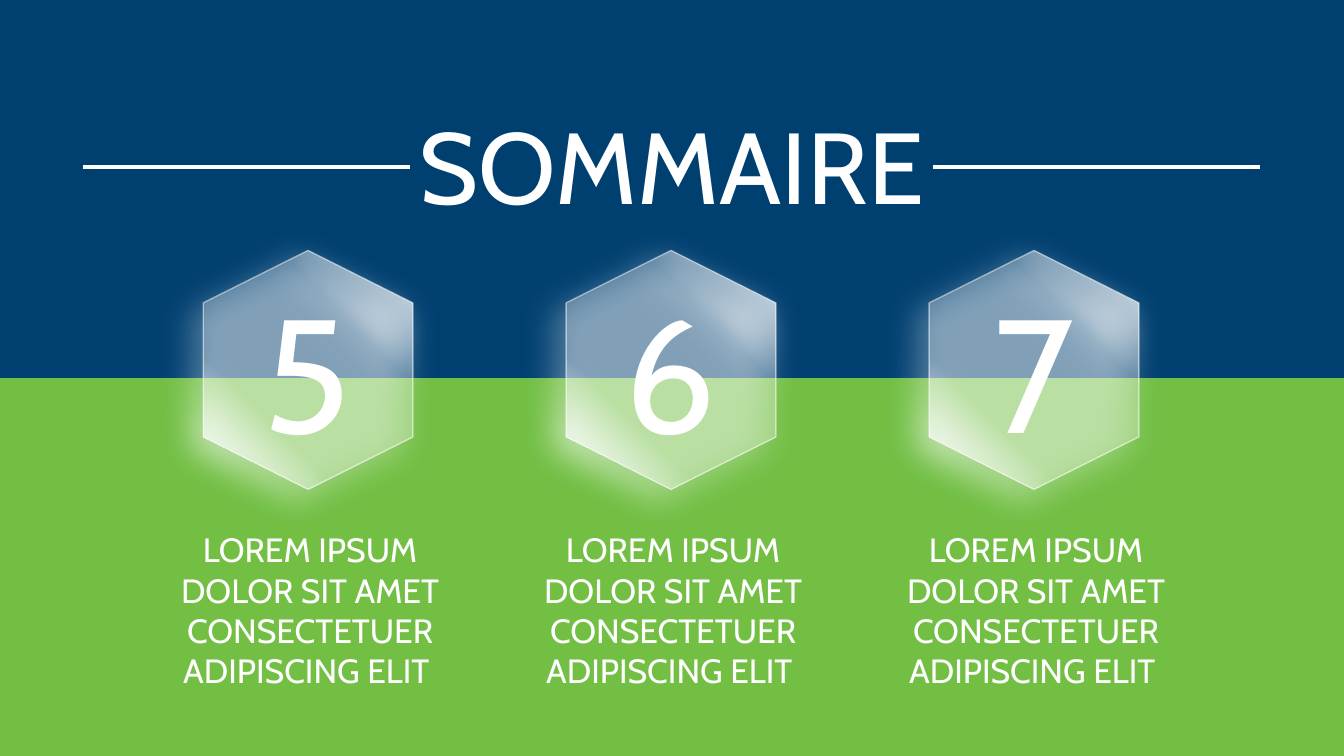
from dataclasses import dataclass

from lxml import etree
from pptx import Presentation
from pptx.dml.color import RGBColor
from pptx.enum.shapes import MSO_CONNECTOR, MSO_SHAPE
from pptx.enum.text import MSO_ANCHOR, MSO_AUTO_SIZE, PP_ALIGN
from pptx.oxml import parse_xml
from pptx.oxml.ns import qn
from pptx.util import Inches, Pt

RECT, HEX = MSO_SHAPE.RECTANGLE, MSO_SHAPE.HEXAGON
LINE = MSO_CONNECTOR.STRAIGHT
CENTER, TOP = PP_ALIGN.CENTER, MSO_ANCHOR.TOP
NO_FIT = MSO_AUTO_SIZE.NONE

NAVY, GREEN, WHITE = "004071", "72BF44", "FFFFFF"
FONT = "Cabin"
WIDE, HIGH = 13.33, 7.5
LEFT, STEP = 1.53, 3.6
CAPTION = "LOREM IPSUM\vDOLOR SIT AMET CONSECTETUER ADIPISCING ELIT "
NS = 'xmlns:a="http://schemas.openxmlformats.org/drawingml/2006/main"'


@dataclass
class Box:
    x: float
    y: float
    w: float
    h: float

    def emu(self) -> tuple:
        return tuple(Inches(v) for v in (self.x, self.y, self.w, self.h))


@dataclass
class Band:
    box: Box
    color: str


@dataclass
class Item:
    digit: str
    text: str


BANDS = [Band(Box(0, 0, WIDE, 4.58), NAVY),
         Band(Box(0, 3.75, WIDE, 3.75), GREEN)]
ITEMS = [Item(digit, CAPTION) for digit in "567"]
RULES = [(0.82, 4.07), (9.25, 12.5)]


def rgb(color: str) -> RGBColor:
    return RGBColor.from_string(color)


def tint(alpha: int) -> str:
    return (f'<a:srgbClr val="{WHITE}">'
            f'<a:alpha val="{alpha * 1000}"/></a:srgbClr>')


def write(shape, text: str, size: int) -> None:
    frame = shape.text_frame
    frame.text = text
    frame.word_wrap = True
    frame.auto_size = NO_FIT
    frame.vertical_anchor = TOP
    para = frame.paragraphs[0]
    para.alignment = CENTER
    for run in para.runs:
        run.font.name = FONT
        run.font.size = Pt(size)
        run.font.color.rgb = rgb(WHITE)


def add_band(shapes, band: Band) -> None:
    shape = shapes.add_shape(RECT, *band.box.emu())
    shape.shadow.inherit = False
    shape.fill.solid()
    shape.fill.fore_color.rgb = rgb(band.color)
    shape.line.fill.background()


def add_glass(shapes, box: Box) -> None:
    shape = shapes.add_shape(HEX, *box.emu())
    shape.rotation = 90
    shape.line.width = Pt(1)
    shape.line.color.rgb = rgb(WHITE)
    clear = shape.line.fill._xPr.find(f".//{qn('a:srgbClr')}")
    etree.SubElement(clear, qn("a:alpha"), val="50000")
    # Clear middle with bright corners
    stops = "".join(f'<a:gs pos="{pos * 1000}">{tint(alpha)}</a:gs>'
                    for pos, alpha in ((0, 100), (30, 30), (70, 30), (100, 100)))
    props = shape._element.spPr
    props.find(qn("a:ln")).addprevious(parse_xml(
        f'<a:gradFill {NS} rotWithShape="1"><a:gsLst>{stops}</a:gsLst>'
        '<a:lin ang="2700000" scaled="0"/></a:gradFill>'))
    # White glow towards the lower left
    props.append(parse_xml(
        f'<a:effectLst {NS}><a:outerShdw blurRad="{Pt(24)}" dist="{Pt(11)}" '
        f'dir="8100000" algn="ctr" rotWithShape="0">{tint(100)}'
        '</a:outerShdw></a:effectLst>'))


def add_item(shapes, item: Item, x: float) -> None:
    group = shapes.add_group_shape().shapes
    write(group.add_textbox(*Box(x, 5.2, 3.09, 1.72).emu()), item.text, 24)
    add_glass(group, Box(x + 0.34, 2.63, 2.37, 2.08))
    write(group.add_textbox(*Box(x + 0.34, 2.65, 2.36, 2.04).emu()),
          item.digit, 115)


def add_rule(shapes, start: float, end: float) -> None:
    y = Inches(1.66)
    rule = shapes.add_connector(LINE, Inches(start), y, Inches(end), y)
    rule.line.color.rgb = rgb(WHITE)
    rule.line.width = Pt(3)
    etree.SubElement(rule._element.spPr, qn("a:effectLst"))


def main() -> None:
    deck = Presentation()
    deck.slide_width, deck.slide_height = Inches(WIDE), Inches(HIGH)
    slide = deck.slides.add_slide(deck.slide_layouts[5])
    shapes = slide.shapes

    # Background bands
    for band in BANDS:
        add_band(shapes, band)

    # Numbered items
    for i, item in enumerate(ITEMS):
        add_item(shapes, item, LEFT + i * STEP)

    # Title between two rules, in front of the bands
    for start, end in RULES:
        add_rule(shapes, start, end)
    title = shapes.title
    title.left, title.top, title.width, title.height = Box(
        0, 0.98, WIDE, 1.31).emu()
    write(title, "SOMMAIRE", 72)
    shapes._spTree.append(title._element)

    deck.save("out.pptx")


if __name__ == "__main__":
    main()
